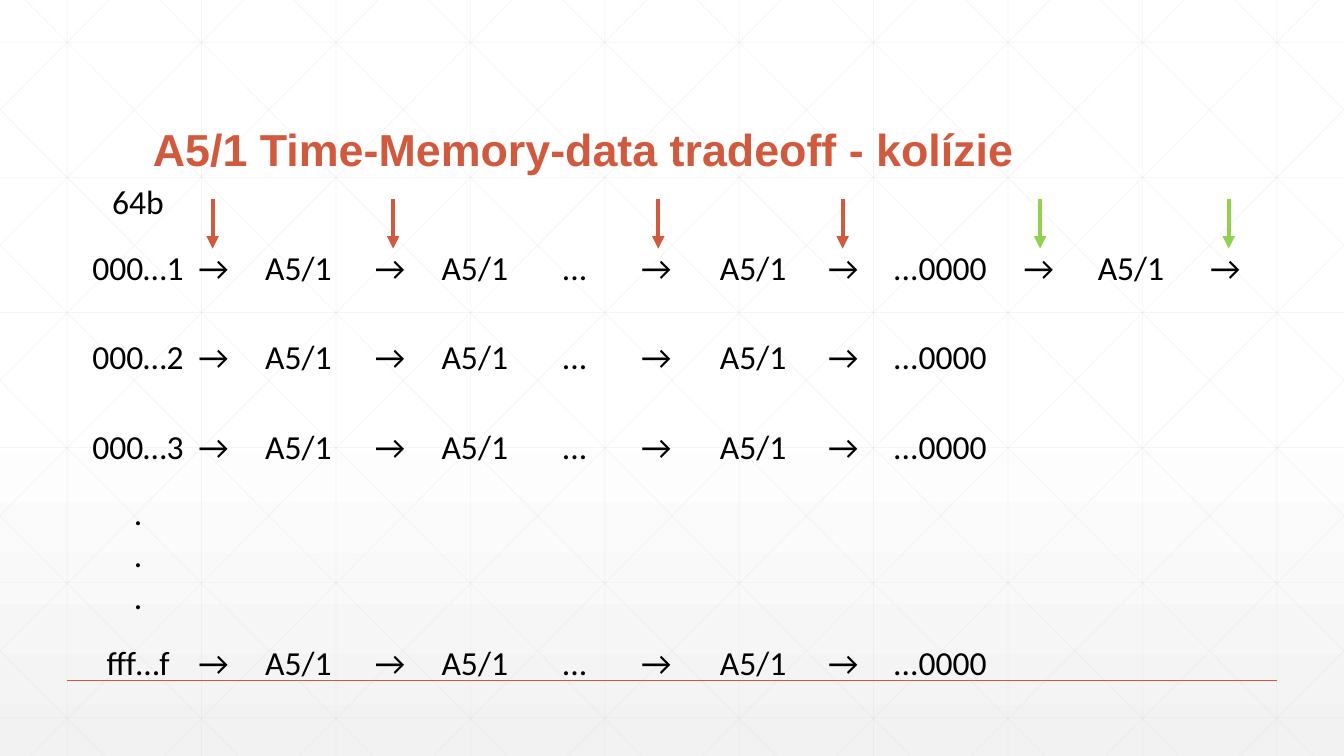
import pptx
import pptx.dml.color
import pptx.enum.shapes
import pptx.enum.text
import pptx.oxml
import pptx.oxml.ns
import pptx.util

Pt = pptx.util.Pt
WIDTH, HEIGHT = 960, 540
COLORS = {
    "white": "FFFFFF",
    "shade": "F2F2F2",
    "grid": "D9D9D9",
    "accent": "D15A3E",
    "green": "92D050",
    "text": "000000",
}
NO_GRID_STYLE = "{2D5ABB26-0587-4C30-8999-92F81FD0307C}"


def rgb(name):
    return pptx.dml.color.RGBColor.from_string(COLORS[name])


def add_xml(parent, tag, attributes=""):
    namespace = pptx.oxml.ns.nsdecls("a")
    parent.append(pptx.oxml.parse_xml(f"<a:{tag} {namespace} {attributes}/>"))


def add_line(page, start, end, color, weight):
    points = [Pt(value) for value in (*start, *end)]
    line = page.shapes.add_connector(pptx.enum.shapes.MSO_CONNECTOR.STRAIGHT, *points)
    line.line.color.rgb = rgb(color)
    line.line.width = Pt(weight)
    add_xml(line.element.spPr, "effectLst")
    return line


def add_background(page):
    fill = page.background.fill
    fill.gradient()
    fill.gradient_angle = 270
    for stop, position, color in zip(fill.gradient_stops, (0.53, 1), ("white", "shade")):
        stop.position = position
        stop.color.rgb = rgb(color)


def add_pattern(page, box):
    left, top, width, height = box
    step, run = 96, 536.5
    slope = height / run
    segments = []

    # Upright and level lines
    for index in range(10):
        x = 48 + step * index
        segments.append(((x, 0), (x, height)))
    for index in range(6):
        y = 30.24 + 96.48 * index
        segments.append(((0, y), (width, y)))

    # Diagonals clipped to the box, each with its mirror image
    for index in range(-5, 10):
        x = 18 + step * index
        first, last = max(x, 0), min(x + run, width)
        y_first, y_last = (first - x) * slope, (last - x) * slope
        segments.append(((first, y_first), (last, y_last)))
        segments.append(((width - first, y_first), (width - last, y_last)))

    for (x1, y1), (x2, y2) in segments:
        line = add_line(page, (left + x1, top + y1), (left + x2, top + y2), "grid", 0.5)
        add_xml(line.element.xpath(".//a:ln//a:srgbClr")[0], "alpha", 'val="25000"')


def add_title(page, box, text):
    title = page.shapes.title
    title.left, title.top, title.width, title.height = map(Pt, box)
    frame = title.text_frame
    frame.text = text
    frame.word_wrap = True
    frame.auto_size = pptx.enum.text.MSO_AUTO_SIZE.NONE
    frame.vertical_anchor = pptx.enum.text.MSO_ANCHOR.BOTTOM
    para = frame.paragraphs[0]
    para.alignment = pptx.enum.text.PP_ALIGN.LEFT
    para.line_spacing = 0.9
    font = para.runs[0].font
    font.name, font.size, font.bold = "Arial", Pt(32), True
    font.color.rgb = rgb("accent")
    # Bring the title in front of the pattern
    title.element.getparent().append(title.element)


def fill_cell(cell, text):
    cell.fill.background()
    cell.margin_left = cell.margin_right = cell.margin_top = Pt(0.75)
    cell.margin_bottom = 0
    cell.vertical_anchor = pptx.enum.text.MSO_ANCHOR.MIDDLE
    cell.text_frame.text = text
    para = cell.text_frame.paragraphs[0]
    para.alignment = pptx.enum.text.PP_ALIGN.CENTER
    for span in para.runs:
        span.font.name, span.font.size = "Calibri", Pt(24)
        span.font.color.rgb = rgb("text")


def add_chains(page, box):
    chain = ["→", "A5/1", "→", "A5/1", "...", "→", "A5/1", "→", "...0000"]
    rows = [
        ["64b"],
        ["000…1", *chain, "→", "A5/1", "→"],
        ["000…2", *chain],
        ["000…3", *chain],
        ["."],
        ["."],
        ["."],
        ["fff…f", *chain],
    ]
    widths = [76.3, 31.7, 89.3, 41.8, 79.2, 63.4, 53.3, 85, 43.9, 94.3, 46.8, 85, 49.7]
    holder = page.shapes.add_table(len(rows), len(widths), *map(Pt, box))
    holder.element.xpath(".//a:tableStyleId")[0].text = NO_GRID_STYLE
    table = holder.table
    table.first_row = table.horz_banding = False
    for column, width in zip(table.columns, widths):
        column.width = Pt(width)
    for row, texts in zip(table.rows, rows):
        row.height = Pt(64 if len(texts) > 1 else 21.6)
        padded = texts + [""] * (len(widths) - len(texts))
        for cell, text in zip(row.cells, padded):
            fill_cell(cell, text)


def add_arrows(page, box):
    left, top, width, height = box
    offsets = {"accent": (0, 128.9, 318.3, 450), "green": (591.1, width)}
    for color, places in offsets.items():
        for offset in places:
            x = left + offset
            arrow = add_line(page, (x, top), (x, top + height), color, 3)
            add_xml(arrow.line._get_or_add_ln(), "tailEnd", 'type="triangle"')


def add_tradeoff_slide(deck, box):
    left, top, width, height = box
    page = deck.slides.add_slide(deck.slide_layouts[5])
    add_background(page)
    add_pattern(page, box)
    # Footer rule
    rule = top + height - 54
    add_line(page, (left + 48, rule), (left + width - 48, rule), "accent", 1)
    add_title(page, (left + 102, top + 39.6, 756, 90), "A5/1 Time-Memory-data tradeoff - kolízie")
    add_chains(page, (left + 60.5, top + 129.6, 839.7, 364))
    add_arrows(page, (left + 151.9, top + 142.3, 725.8, 35.3))


def main():
    deck = pptx.Presentation()
    deck.slide_width, deck.slide_height = Pt(WIDTH), Pt(HEIGHT)
    add_tradeoff_slide(deck, (0, 0, WIDTH, HEIGHT))
    deck.save("out.pptx")


if __name__ == "__main__":
    main()
